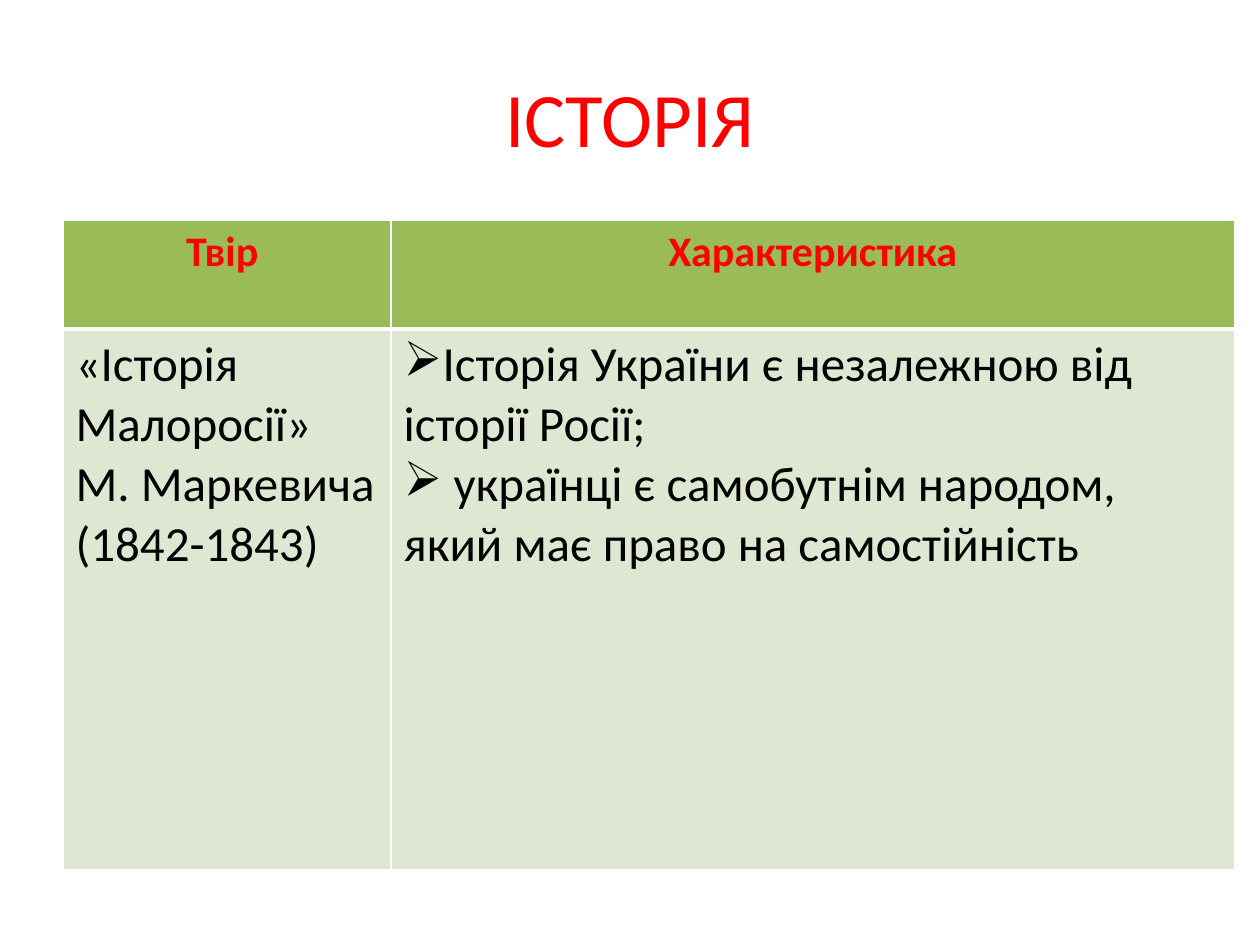
from dataclasses import dataclass

import pptx
import pptx.dml.color
import pptx.enum.text
import pptx.oxml
import pptx.oxml.ns
import pptx.util
from pptx.util import Cm

ALIGN = pptx.enum.text.PP_ALIGN


@dataclass(frozen=True)
class Theme:
    font: str = "Calibri"
    accent: str = "FF0000"
    body: str = "000000"
    border: str = "FFFFFF"
    header_fill: str = "9BBB59"
    body_fill: str = "DEE7D1"
    title_size: int = 44
    header_size: int = 24
    body_size: int = 28


THEME = Theme()
HEADERS = ["Твір ", "Характеристика"]
WORK = ["«Історія", "Малоросії»", "М. Маркевича", "(1842-1843)"]
FEATURES = [
    "Історія України є незалежною від історії Росії;",
    " українці є самобутнім народом, який має право на самостійність",
]


def rgb(value):
    return pptx.dml.color.RGBColor.from_string(value)


def write(frame, lines, *, size, color, bold=False, align=ALIGN.LEFT, bullet=None):
    """Fill a text frame with one paragraph for each line."""
    frame.word_wrap = True
    for index, line in enumerate(lines):
        para = frame.paragraphs[0] if index == 0 else frame.add_paragraph()
        para.alignment = align
        span = para.add_run()
        span.text = line
        span.font.name = THEME.font
        span.font.size = pptx.util.Pt(size)
        span.font.bold = bold
        span.font.color.rgb = rgb(color)
        if bullet:
            mark = pptx.oxml.parse_xml(
                f'<a:buChar {pptx.oxml.ns.nsdecls("a")} char="{bullet}"/>')
            para._p.get_or_add_pPr().append(mark)


def style_cell(cell, fill, top, bottom):
    """Set the fill and the borders, with widths in points."""
    properties = cell._tc.get_or_add_tcPr()
    for side, width in (("L", 1), ("R", 1), ("T", top), ("B", bottom)):
        properties.append(pptx.oxml.parse_xml(
            f'<a:ln{side} {pptx.oxml.ns.nsdecls("a")} w="{pptx.util.Pt(width)}">'
            f'<a:solidFill><a:srgbClr val="{THEME.border}"/></a:solidFill>'
            f'</a:ln{side}>'))
    cell.fill.solid()
    cell.fill.fore_color.rgb = rgb(fill)


def add_title(page, left, top, width, height):
    box = page.shapes.add_textbox(left, top, width, height)
    box.text_frame.vertical_anchor = pptx.enum.text.MSO_ANCHOR.MIDDLE
    write(box.text_frame, ["ІСТОРІЯ"], size=THEME.title_size,
          color=THEME.accent, align=ALIGN.CENTER)


def add_works_table(page, left, top, width, height):
    table = page.shapes.add_table(2, 2, left, top, width, height).table
    table.horz_banding = False
    first_width, header_height = int(width * 0.28), int(height / 6)
    table.columns[0].width = first_width
    table.columns[1].width = width - first_width
    table.rows[0].height = header_height
    table.rows[1].height = height - header_height

    for column, (header, lines, bullet) in enumerate(
            zip(HEADERS, (WORK, FEATURES), (None, "➢"))):
        head, body = table.cell(0, column), table.cell(1, column)
        style_cell(head, THEME.header_fill, top=1, bottom=3)
        style_cell(body, THEME.body_fill, top=3, bottom=1)
        write(head.text_frame, [header], size=THEME.header_size,
              color=THEME.accent, bold=True, align=ALIGN.CENTER)
        write(body.text_frame, lines, size=THEME.body_size,
              color=THEME.body, bullet=bullet)


def main():
    deck = pptx.Presentation()
    deck.slide_width, deck.slide_height = Cm(25.4), Cm(19.05)
    page = deck.slides.add_slide(deck.slide_layouts[6])
    add_title(page, Cm(1.27), Cm(0.76), Cm(22.86), Cm(3.18))
    add_works_table(page, Cm(1.27), Cm(4.45), Cm(23.62), Cm(13.08))
    deck.save("out.pptx")


if __name__ == "__main__":
    main()
